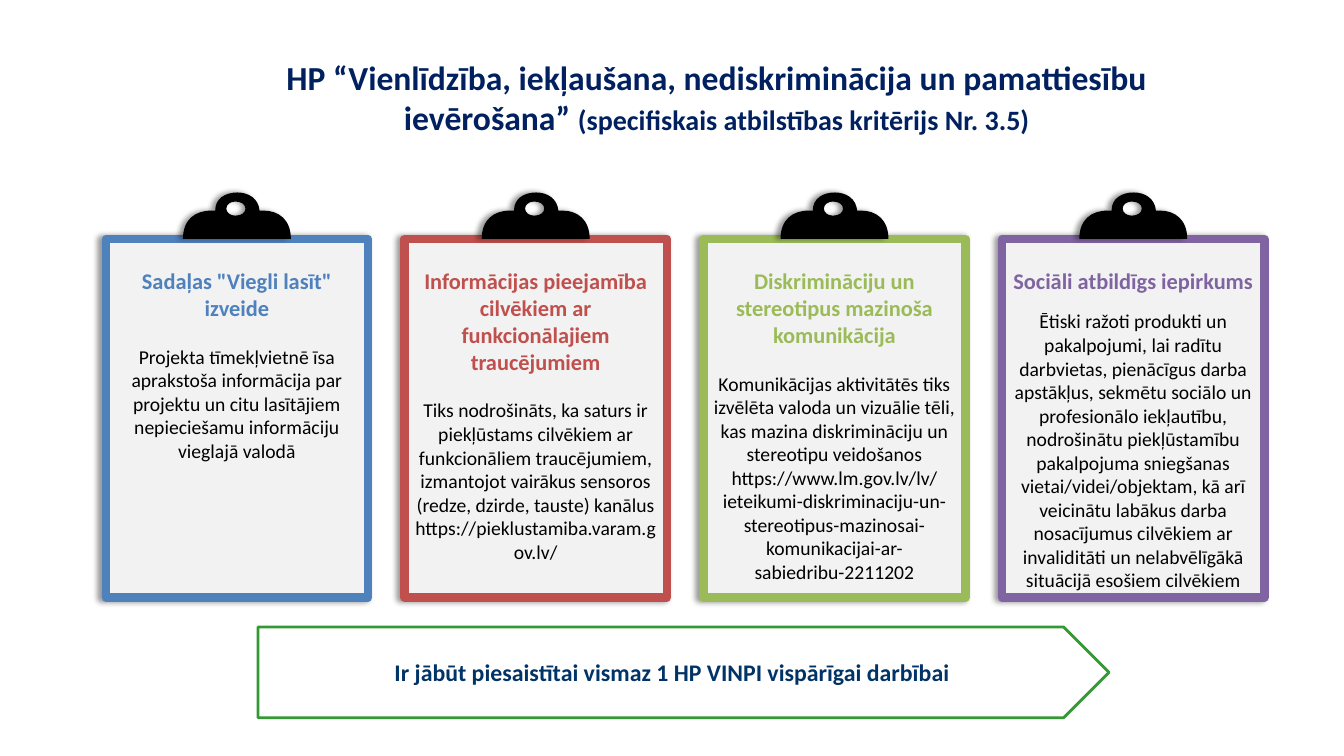
from lxml.etree import SubElement
from pptx import Presentation
from pptx.dml.color import RGBColor
from pptx.enum.shapes import MSO_SHAPE
from pptx.enum.text import MSO_ANCHOR, PP_ALIGN
from pptx.oxml.ns import qn
from pptx.util import Inches, Pt

NAVY = RGBColor(0x00, 0x20, 0x60)
ARROW_TEXT = RGBColor(0x00, 0x33, 0x66)
ARROW_LINE = RGBColor(0x33, 0x99, 0x33)
BLACK = RGBColor(0, 0, 0)
PAPER = RGBColor(0xF2, 0xF2, 0xF2)
BLUE = RGBColor(0x4F, 0x81, 0xBD)
RED = RGBColor(0xC0, 0x50, 0x4D)
GREEN = RGBColor(0x9B, 0xBB, 0x59)
PURPLE = RGBColor(0x80, 0x64, 0xA2)

TITLE = [
    ("HP “Vienlīdzība, iekļaušana, nediskriminācija un pamattiesību ievērošana” ", 24),
    ("(specifiskais atbilstības kritērijs Nr. 3.5)", 20),
]
ARROW = "Ir jābūt piesaistītai vismaz 1 HP VINPI vispārīgai darbībai"
# colour, heading, gap below the heading in points, body paragraphs
CARDS = [
    (BLUE, 'Sadaļas "Viegli lasīt" izveide', 17, [
        "Projekta tīmekļvietnē īsa aprakstoša informācija par projektu un citu "
        "lasītājiem nepieciešamu informāciju vieglajā valodā"]),
    (RED, "Informācijas pieejamība cilvēkiem ar funkcionālajiem traucējumiem", 17, [
        "Tiks nodrošināts, ka saturs ir piekļūstams cilvēkiem ar funkcionāliem "
        "traucējumiem, izmantojot vairākus sensoros (redze, dzirde, tauste) kanālus "
        "https://pieklustamiba.varam.gov.lv/"]),
    (GREEN, "Diskrimināciju un stereotipus mazinoša komunikācija", 17, [
        "Komunikācijas aktivitātēs tiks izvēlēta valoda un vizuālie tēli, kas mazina "
        "diskrimināciju un stereotipu veidošanos",
        "https://www.lm.gov.lv/lv/ieteikumi-diskriminaciju-un-stereotipus-mazinosai-"
        "komunikacijai-ar-sabiedribu-2211202"]),
    (PURPLE, "Sociāli atbildīgs iepirkums", 11, [
        "Ētiski ražoti produkti un pakalpojumi, lai radītu darbvietas, pienācīgus darba "
        "apstākļus, sekmētu sociālo un profesionālo iekļautību, nodrošinātu "
        "piekļūstamību pakalpojuma sniegšanas vietai/videi/objektam, kā arī veicinātu "
        "labākus darba nosacījumus cilvēkiem ar invaliditāti un nelabvēlīgākā "
        "situācijā esošiem cilvēkiem"]),
]

CARD_LEFT, CARD_TOP, CARD_WIDTH, CARD_HEIGHT = 1.05, 2.37, 2.6, 3.56
CARD_STEP = (9.94 - CARD_LEFT) / 3
CLIP_WIDTH, CLIP_TOP = 1.07, 1.91
# Hundredths of an inch: each step lists its Bézier control points, if any, then its end
CLIP_BODY = [
    [(80, 18)], [(76, 18)],
    [(75, 6), (65, 0), (54, 0)], [(42, 0), (32, 6), (32, 18)],
    [(28, 18)], [(12, 18), (0, 27), (0, 46)],
    [(107, 46)], [(107, 27), (95, 18), (80, 18)],
]
CLIP_HOLE = [
    [(52, 23)],
    [(47, 23), (43, 20), (43, 16)], [(43, 12), (47, 9), (52, 9)],
    [(58, 9), (62, 12), (62, 16)], [(62, 20), (58, 23), (52, 23)],
]


def add_shadow(shape):
    shape.shadow.inherit = False
    effects = shape._element.spPr.find(qn("a:effectLst"))
    shadow = SubElement(effects, qn("a:outerShdw"), blurRad=str(Pt(4)), dist=str(Pt(3)),
                        dir="10800000", algn="r", rotWithShape="0")
    color = SubElement(shadow, qn("a:srgbClr"), val=str(BLACK))
    SubElement(color, qn("a:alpha"), val="40000")


def add_span(para, text, size, color, bold=True):
    para.alignment = PP_ALIGN.CENTER
    span = para.add_run()
    span.text = text
    span.font.color.rgb = color
    for name, value in {"name": "Calibri", "size": Pt(size), "bold": bold}.items():
        setattr(span.font, name, value)


def set_frame(shape, **values):
    for name, value in {"word_wrap": True, **values}.items():
        setattr(shape.text_frame, name, value)
    return shape.text_frame


def add_card(page, left, color, heading, gap, body):
    card = page.shapes.add_shape(MSO_SHAPE.RECTANGLE, Inches(left), Inches(CARD_TOP),
                                 Inches(CARD_WIDTH), Inches(CARD_HEIGHT))
    card.fill.solid()
    card.fill.fore_color.rgb = PAPER
    card.line.color.rgb = color
    card.line.width = Pt(6)
    add_shadow(card)
    frame = set_frame(card, vertical_anchor=MSO_ANCHOR.TOP, margin_top=Inches(0.28))
    add_span(frame.paragraphs[0], heading, 16, color)
    for i, text in enumerate(body):
        para = frame.add_paragraph()
        para.space_before = Pt(0 if i else gap)
        add_span(para, text, 14, BLACK, bold=False)


def bend_segments(shape, steps):
    """Turn the straight segments whose step has control points into curves."""
    segments = list(shape._element.iter(qn("a:lnTo")))
    for segment, step in zip(segments, steps):
        if len(step) == 1:
            continue
        segment.tag = qn("a:cubicBezTo")
        segment.remove(segment[0])
        for x, y in step:
            SubElement(segment, qn("a:pt"), x=str(x), y=str(y))


def add_clip(page, left):
    body, hole = ([step[-1] for step in contour] for contour in (CLIP_BODY, CLIP_HOLE))
    builder = page.shapes.build_freeform(*body[0], scale=Inches(0.01))
    builder.add_line_segments(body[1:], close=True)
    builder.move_to(*hole[0])
    builder.add_line_segments(hole[1:], close=True)
    clip = builder.convert_to_shape(Inches(left), Inches(CLIP_TOP))
    bend_segments(clip, CLIP_BODY[1:] + CLIP_HOLE[1:])
    clip.fill.solid()
    clip.fill.fore_color.rgb = BLACK
    clip.line.fill.background()
    add_shadow(clip)


def main():
    deck = Presentation()
    deck.slide_width, deck.slide_height = Inches(13.33), Inches(7.5)
    page = deck.slides.add_slide(deck.slide_layouts[6])

    title = page.shapes.add_textbox(Inches(2.68), Inches(0.37), Inches(8.86), Inches(1.18))
    frame = set_frame(title, vertical_anchor=MSO_ANCHOR.MIDDLE)
    for text, size in TITLE:
        add_span(frame.paragraphs[0], text, size, NAVY)

    for i, card in enumerate(CARDS):
        left = CARD_LEFT + i * CARD_STEP
        add_card(page, left, *card)
        add_clip(page, left + (CARD_WIDTH - CLIP_WIDTH) / 2)

    arrow = page.shapes.add_shape(MSO_SHAPE.PENTAGON, Inches(2.56), Inches(6.22),
                                  Inches(8.44), Inches(0.9))
    arrow.shadow.inherit = False
    arrow.fill.background()
    arrow.line.color.rgb = ARROW_LINE
    arrow.line.width = Pt(2)
    frame = set_frame(arrow, vertical_anchor=MSO_ANCHOR.MIDDLE)
    add_span(frame.paragraphs[0], ARROW, 17, ARROW_TEXT)

    deck.save("out.pptx")


if __name__ == "__main__":
    main()
